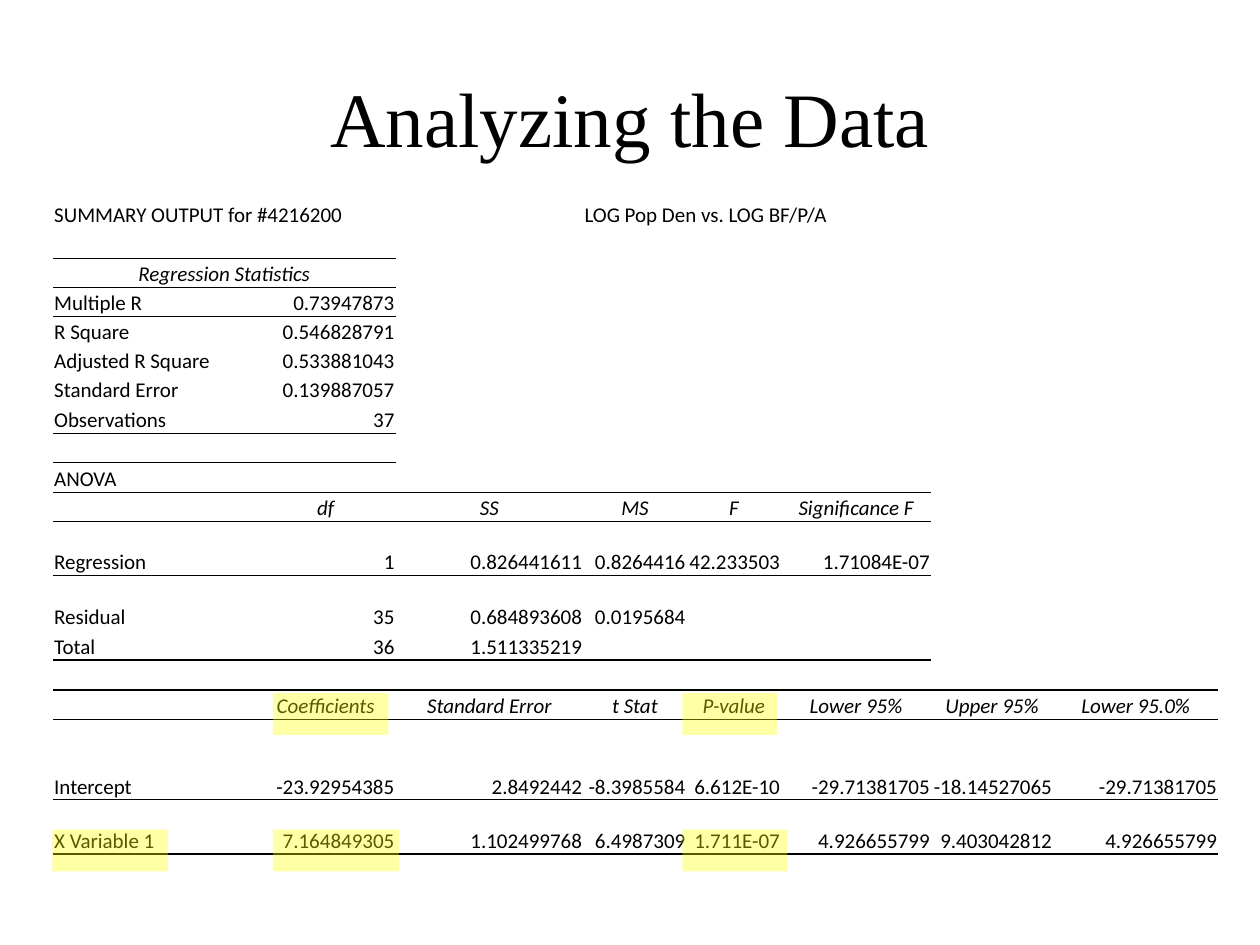
from dataclasses import dataclass

from lxml import etree
from pptx import Presentation
from pptx.dml.color import RGBColor
from pptx.enum.shapes import MSO_SHAPE
from pptx.enum.text import MSO_ANCHOR, PP_ALIGN
from pptx.oxml.ns import qn
from pptx.util import Inches, Pt

RECTANGLE = MSO_SHAPE.RECTANGLE
BOTTOM, MIDDLE = MSO_ANCHOR.BOTTOM, MSO_ANCHOR.MIDDLE
LEFT, CENTER, RIGHT = PP_ALIGN.LEFT, PP_ALIGN.CENTER, PP_ALIGN.RIGHT

COLORS = {"ink": "000000", "marker": "FFFF00"}
MARKER_OPACITY = 35
NO_STYLE = "{2D5ABB26-0587-4C30-8999-92F81FD0307C}"
GRID = Inches(1) // 12  # markers sit on a grid of twelfths of an inch

COLUMN_WIDTHS = [1.61, 1.11, 1.49, 0.82, 0.75, 1.19, 0.97, 1.31]
ROW_HEIGHTS = [0.23, 0.24, 0.23, 0.23, 0.23, 0.23, 0.23, 0.24, 0.23,
               0.24, 0.23, 0.43, 0.43, 0.24, 0.24, 0.23, 0.64, 0.43]
TITLE_ROW = 0
HEADER_ROWS = {2, 10, 15}
MERGES = [(0, 3, 5), (2, 0, 1)]  # row, first column, last column

REGRESSION_OUTPUT = [
    ["SUMMARY OUTPUT for", "#4216200", "", "LOG Pop Den vs. LOG BF/P/A"],
    [],
    ["Regression Statistics"],
    ["Multiple R", "0.73947873"],
    ["R Square", "0.546828791"],
    ["Adjusted R Square", "0.533881043"],
    ["Standard Error", "0.139887057"],
    ["Observations", "37"],
    [],
    ["ANOVA"],
    ["", "df", "SS", "MS", "F", "Significance F"],
    ["Regression", "1", "0.826441611", "0.8264416", "42.233503", "1.71084E-07"],
    ["Residual", "35", "0.684893608", "0.0195684"],
    ["Total", "36", "1.511335219"],
    [],
    ["", "Coefficients", "Standard Error", "t Stat", "P-value",
     "Lower 95%", "Upper 95%", "Lower 95.0%"],
    ["Intercept", "-23.92954385", "2.8492442", "-8.3985584", "6.612E-10",
     "-29.71381705", "-18.14527065", "-29.71381705"],
    ["X Variable 1", "7.164849305", "1.102499768", "6.4987309", "1.711E-07",
     "4.926655799", "9.403042812", "4.926655799"],
]


@dataclass(frozen=True)
class Rule:
    """A line under a table row, reaching over the first columns."""
    columns: int
    points: float


RULES = {
    1: Rule(2, 1), 2: Rule(2, 0.5), 7: Rule(2, 1),
    9: Rule(6, 1), 10: Rule(6, 0.5), 13: Rule(6, 1),
    14: Rule(8, 1), 15: Rule(8, 0.5), 17: Rule(8, 1),
}


@dataclass(frozen=True)
class Marker:
    """A highlighter stroke, in grid units."""
    left: int
    top: int
    width: int
    height: int = 4


MARKERS = [Marker(5, 79, 11), Marker(26, 66, 11), Marker(65, 66, 9),
           Marker(65, 79, 10), Marker(26, 79, 12)]


def style_font(font, name: str, size: float, italic: bool = False) -> None:
    font.name, font.size, font.italic = name, Pt(size), italic
    font.color.rgb = RGBColor.from_string(COLORS["ink"])


def draw_border(cell, side: str, points: float) -> None:
    line = etree.SubElement(cell._tc.get_or_add_tcPr(), qn(f"a:{side}"),
                            w=str(Pt(points)))
    solid = etree.SubElement(line, qn("a:solidFill"))
    etree.SubElement(solid, qn("a:srgbClr"), val=COLORS["ink"])


def alignment_for(row: int, column: int):
    if row in HEADER_ROWS:
        return CENTER
    return LEFT if row == TITLE_ROW or column == 0 else RIGHT


def fill_cell(cell, text: str, row: int, column: int) -> None:
    # Borders come before the fill in the cell properties
    for side, ruled_row in (("lnT", row - 1), ("lnB", row)):
        rule = RULES.get(ruled_row)
        if rule and column < rule.columns:
            draw_border(cell, side, rule.points)
    cell.fill.background()
    cell.vertical_anchor = BOTTOM
    cell.margin_left = cell.margin_right = cell.margin_top = Inches(0.01)
    cell.margin_bottom = 0
    paragraph = cell.text_frame.paragraphs[0]
    if text:
        paragraph.text = text
        paragraph.alignment = alignment_for(row, column)
        style_font(paragraph.runs[0].font, "Calibri", 12, row in HEADER_ROWS)
    else:
        # Keeps empty cells from stretching their row
        etree.SubElement(paragraph._p, qn("a:endParaRPr"), sz="1200")


def add_regression_table(slide) -> None:
    frame = slide.shapes.add_table(
        len(ROW_HEIGHTS), len(COLUMN_WIDTHS), Inches(0.42), Inches(1.58),
        Inches(sum(COLUMN_WIDTHS)), Inches(sum(ROW_HEIGHTS)))
    table = frame.table
    table.first_row = table.horz_banding = False
    table._tbl.tblPr.find(qn("a:tableStyleId")).text = NO_STYLE
    for column, width in zip(table.columns, COLUMN_WIDTHS):
        column.width = Inches(width)
    for row, height in zip(table.rows, ROW_HEIGHTS):
        row.height = Inches(height)
    for row, first, last in MERGES:
        table.cell(row, first).merge(table.cell(row, last))
    for row, values in enumerate(REGRESSION_OUTPUT):
        for column in range(len(COLUMN_WIDTHS)):
            text = values[column] if column < len(values) else ""
            fill_cell(table.cell(row, column), text, row, column)


def add_marker(slide, marker: Marker) -> None:
    stroke = slide.shapes.add_shape(
        RECTANGLE, marker.left * GRID, marker.top * GRID,
        marker.width * GRID, marker.height * GRID)
    stroke.shadow.inherit = False
    stroke.line.fill.background()
    stroke.fill.solid()
    stroke.fill.fore_color.rgb = RGBColor.from_string(COLORS["marker"])
    color = stroke._element.spPr.find(f"{qn('a:solidFill')}/{qn('a:srgbClr')}")
    etree.SubElement(color, qn("a:alpha"), val=str(MARKER_OPACITY * 1000))


def main() -> None:
    deck = Presentation()
    deck.slide_width, deck.slide_height = Inches(10), Inches(7.5)
    slide = deck.slides.add_slide(deck.slide_layouts[5])

    # Title
    title = slide.shapes.title
    title.left, title.top = Inches(0.5), Inches(0.3)
    title.width, title.height = Inches(9), Inches(1.25)
    title.text_frame.text = "Analyzing the Data"
    title.text_frame.vertical_anchor = MIDDLE
    heading = title.text_frame.paragraphs[0]
    heading.alignment = CENTER
    style_font(heading.runs[0].font, "Times New Roman", 44)

    # Regression output with the key values highlighted
    add_regression_table(slide)
    for marker in MARKERS:
        add_marker(slide, marker)

    deck.save("out.pptx")


if __name__ == "__main__":
    main()
